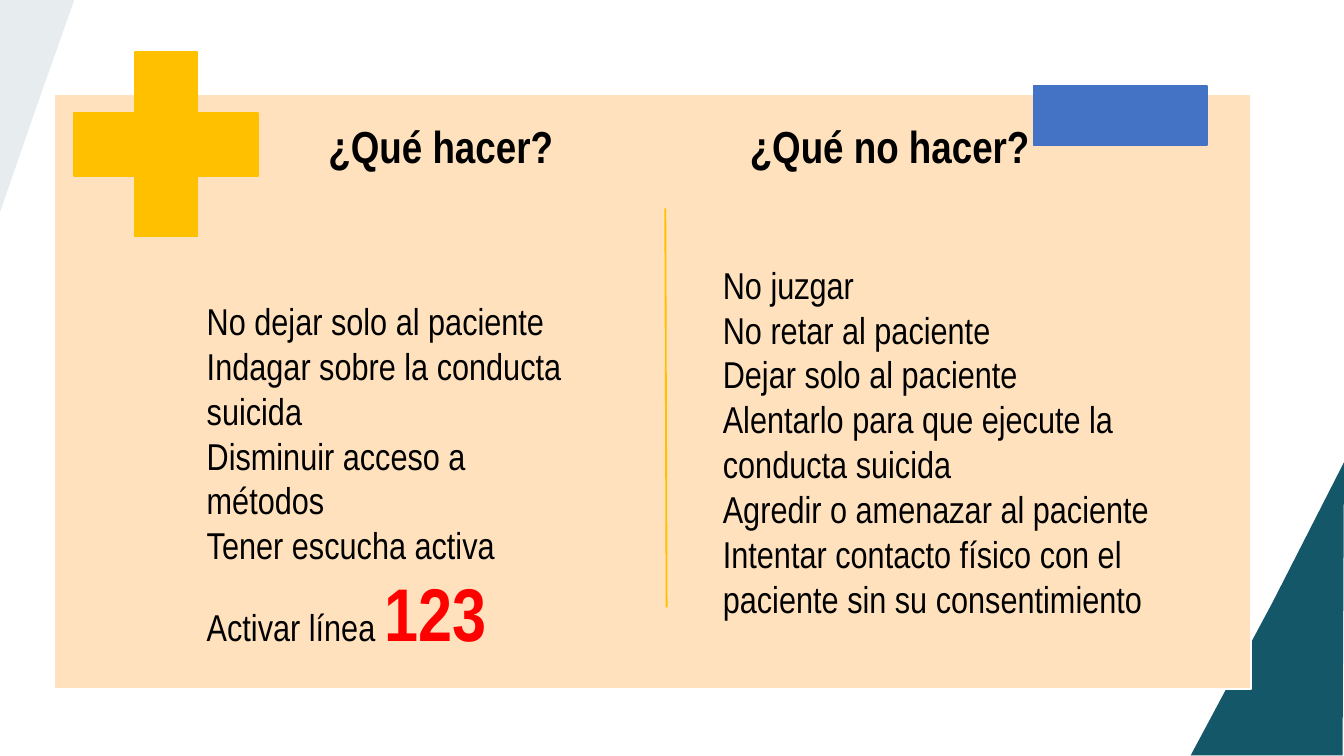
import pptx
import pptx.dml.color
import pptx.enum.shapes
import pptx.enum.text
import pptx.oxml
import pptx.oxml.ns
import pptx.util
from pptx.util import Inches

COLORS = {"teal": "145768", "peach": "FFE2BD", "white": "FFFFFF", "amber": "FFC000",
          "blue": "4472C4", "black": "000000", "red": "FF0000"}
FONT = "Arial Narrow"
SHAPE = pptx.enum.shapes.MSO_SHAPE
ALIGN = pptx.enum.text.PP_ALIGN

CORNERS = [
    ([(9.47, 4.48), (10, 3.44), (9.99, 5.62), (8.86, 5.62)], 100),
    ([(0.26, 0.83), (-0.01, 1.61), (-0.01, -0.02), (0.56, -0.02)], 10),
]
PANEL = (SHAPE.RECTANGLE, (0.4, 0.7, 8.91, 4.43), "peach", "white")
SIGNS = [
    (SHAPE.CROSS, (0.55, 0.39, 1.37, 1.37), "amber", "amber"),
    (SHAPE.RECTANGLE, (7.69, 0.64, 1.29, 0.44), "blue", "blue"),
]
HEADINGS = [
    ("¿Qué hacer?", (1.65, 0.88, 3.26, 4.43)),
    ("¿Qué no hacer?", (4.99, 0.88, 3.26, 4.43)),
]
LISTS = [
    ((1.44, 2.17, 2.87, 3.25), [
        "No dejar solo al paciente",
        "Indagar sobre la conducta suicida",
        "Disminuir acceso a métodos",
        "Tener escucha activa",
        "Activar línea ",
    ]),
    ((5.28, 1.9, 3.92, 3.02), [
        "No juzgar",
        "No retar al paciente",
        "Dejar solo al paciente",
        "Alentarlo para que ejecute la conducta suicida",
        "Agredir o amenazar al paciente",
        "Intentar contacto físico con el paciente sin su consentimiento",
    ]),
]
HOTLINE = "123"


def rgb(name):
    return pptx.dml.color.RGBColor.from_string(COLORS[name])


def add_run(p, text, size=20, color="black", bold=False):
    r = p.add_run()
    r.text = text
    r.font.name = FONT
    r.font.size = pptx.util.Pt(size)
    r.font.bold = bold
    r.font.color.rgb = rgb(color)


def add_text(s, box, lines, align=ALIGN.LEFT, spacing=1.0, inset=None, **fmt):
    tf = s.shapes.add_textbox(*map(Inches, box)).text_frame
    tf.word_wrap = True
    if inset is not None:
        tf.margin_left = tf.margin_right = tf.margin_top = tf.margin_bottom = Inches(inset)
    for i, line in enumerate(lines):
        p = tf.paragraphs[0] if i == 0 else tf.add_paragraph()
        p.alignment = align
        p.line_spacing = spacing
        add_run(p, line, **fmt)
    return tf


def add_block(s, kind, box, fill, line):
    sp = s.shapes.add_shape(kind, *map(Inches, box))
    sp.shadow.inherit = False
    sp.fill.solid()
    sp.fill.fore_color.rgb = rgb(fill)
    sp.line.color.rgb = rgb(line)
    sp.line.width = pptx.util.Pt(1)
    return sp


def add_corner(s, points, opacity):
    start, *rest = [(Inches(x), Inches(y)) for x, y in points]
    builder = s.shapes.build_freeform(*start)
    builder.add_line_segments(rest, close=True)
    sp = builder.convert_to_shape()
    sp.shadow.inherit = False
    sp.line.fill.background()
    sp.fill.solid()
    sp.fill.fore_color.rgb = rgb("teal")
    if opacity < 100:
        clr = sp._element.spPr.find(".//" + pptx.oxml.ns.qn("a:srgbClr"))
        alpha = pptx.oxml.parse_xml(
            f'<a:alpha {pptx.oxml.ns.nsdecls("a")} val="{opacity * 1000}"/>')
        clr.append(alpha)


def add_divider(s, *ends):
    kind = pptx.enum.shapes.MSO_CONNECTOR.STRAIGHT
    line = s.shapes.add_connector(kind, *map(Inches, ends))
    line.line.color.rgb = rgb("amber")
    line.line.width = pptx.util.Pt(1)
    effects = pptx.oxml.parse_xml(f'<a:effectLst {pptx.oxml.ns.nsdecls("a")}/>')
    line._element.spPr.append(effects)


def main():
    prs = pptx.Presentation()
    prs.slide_width = Inches(10)
    prs.slide_height = prs.slide_width * 9 // 16
    s = prs.slides.add_slide(prs.slide_layouts[6])

    for points, opacity in CORNERS:
        add_corner(s, points, opacity)
    add_block(s, *PANEL)
    for text, box in HEADINGS:
        add_text(s, box, [text], align=ALIGN.CENTER, spacing=0.9, inset=0.05,
                 size=24, bold=True)
    plus, minus = [add_block(s, *sign) for sign in SIGNS]
    plus.adjustments[0] = 0.33
    add_divider(s, 4.95, 1.55, 4.96, 4.52)
    todo, avoid = [add_text(s, box, lines) for box, lines in LISTS]
    add_run(todo.paragraphs[-1], HOTLINE, size=40, color="red", bold=True)

    prs.save("out.pptx")


if __name__ == "__main__":
    main()
